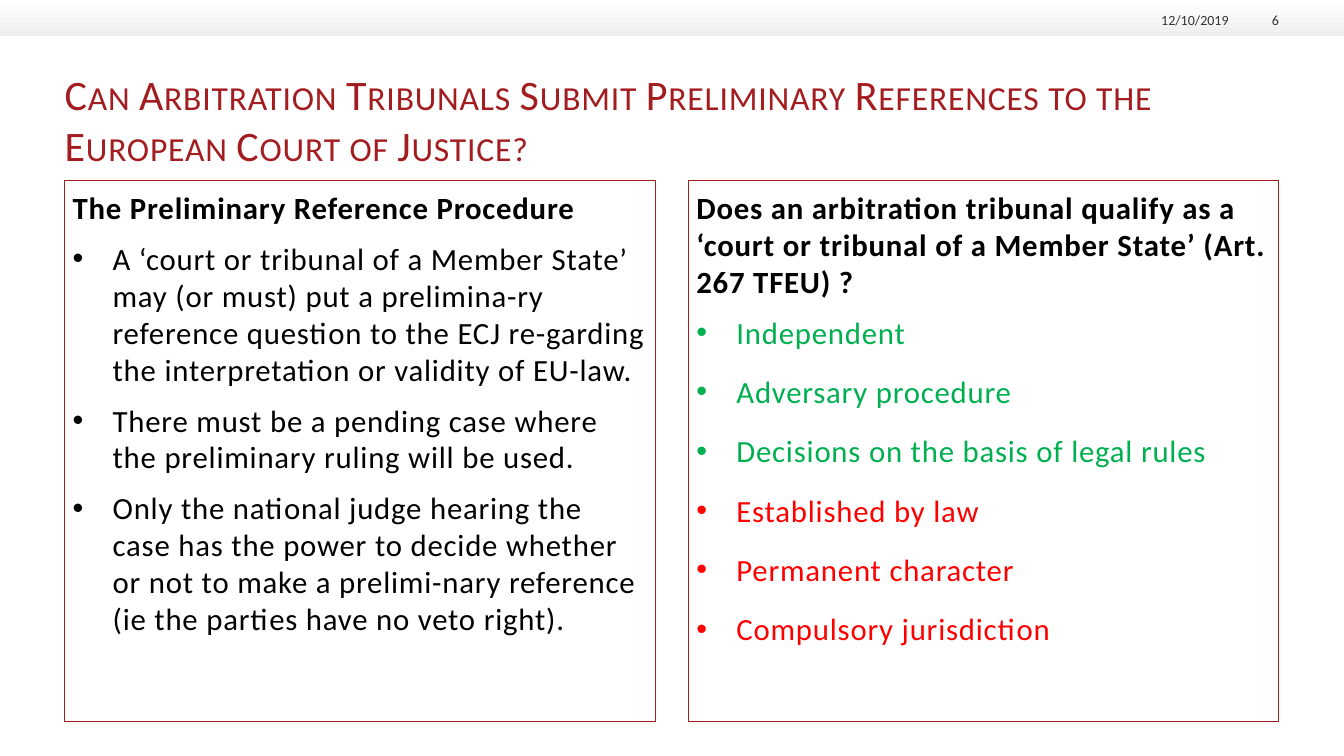
from lxml import etree
from pptx import Presentation
from pptx.dml.color import RGBColor
from pptx.enum import shapes, text
from pptx.oxml.ns import qn
from pptx.util import Cm, Pt

CRIMSON = RGBColor(0xA3, 0x1D, 0x20)
BLACK = RGBColor(0, 0, 0)
GREEN = RGBColor(0x00, 0xB0, 0x50)
RED = RGBColor(0xFF, 0, 0)
GREY = RGBColor(0x33, 0x33, 0x33)
WHITE = RGBColor(0xFF, 0xFF, 0xFF)
SILVER = RGBColor(0xEE, 0xEF, 0xEE)

MARGIN = Cm(1.63)
INDENT = Cm(1.01)
PANEL_WIDTH = Cm(14.88)

deck = Presentation()
deck.slide_width, deck.slide_height = Cm(33.87), Cm(19.05)
page = deck.slides.add_slide(deck.slide_layouts[6])


def add_box(left, top, width, height, inset=0, anchor=text.MSO_ANCHOR.TOP):
    box = page.shapes.add_textbox(left, top, width, height)
    frame = box.text_frame
    frame.word_wrap = True
    frame.vertical_anchor = anchor
    frame.margin_left = frame.margin_right = inset
    frame.margin_top = frame.margin_bottom = inset
    return box


def write(para, words, size, colour, bold=False, **run_settings):
    span = para.add_run()
    span.text = words
    para.font.name = "Calibri"
    para.font.size = Pt(size)
    para.font.bold = bold
    para.font.color.rgb = colour
    for name, value in run_settings.items():
        span._r.get_or_add_rPr().set(name, value)


# Header band
band = page.shapes.add_shape(shapes.MSO_SHAPE.RECTANGLE, 0, 0, deck.slide_width, Cm(0.92))
band.shadow.inherit = False
band.line.fill.background()
band.fill.gradient()
band.fill.gradient_angle = 270
for stop, colour in zip(band.fill.gradient_stops, (WHITE, SILVER)):
    stop.color.rgb = colour

# Title
title = add_box(MARGIN, Cm(1.73), Cm(30.58), Cm(2.41))
write(title.text_frame.paragraphs[0],
      "Can Arbitration Tribunals Submit Preliminary References to the European Court of Justice?",
      30, CRIMSON, spc="60", cap="small")

# Two panels: left edge, heading, space after each bullet, bullets
panels = [
    (MARGIN, "The Preliminary Reference Procedure", 0, [
        ("A ‘court or tribunal of a Member State’ may (or must) put a prelimina-ry reference "
         "question to the ECJ re-garding the interpretation or validity of EU-law.", BLACK),
        ("There must be a pending case where the preliminary ruling will be used.", BLACK),
        ("Only the national judge hearing the case has the power to decide whether or not to "
         "make a prelimi-nary reference (ie the parties have no veto right).", BLACK),
    ]),
    (Cm(17.35), "Does an arbitration tribunal qualify as a ‘court or tribunal of a Member State’ "
     "(Art. 267 TFEU) ?", 6, [
        ("Independent", GREEN),
        ("Adversary procedure", GREEN),
        ("Decisions on the basis of legal rules", GREEN),
        ("Established by law", RED),
        ("Permanent character", RED),
        ("Compulsory jurisdiction", RED),
    ]),
]
for left, heading, space_after, bullets in panels:
    panel = add_box(left, Cm(4.55), PANEL_WIDTH, Cm(13.64), inset=Cm(0.2))
    panel.line.color.rgb = CRIMSON
    panel.line.width = Pt(0.75)
    write(panel.text_frame.paragraphs[0], heading, 22, BLACK, bold=True, spc="60")
    for words, colour in bullets:
        para = panel.text_frame.add_paragraph()
        para.space_before = Pt(10)
        para.space_after = Pt(space_after)
        settings = para._p.get_or_add_pPr()
        settings.set("marL", str(INDENT))
        settings.set("indent", str(-INDENT))
        etree.SubElement(settings, qn("a:buFont")).set("typeface", "Arial")
        etree.SubElement(settings, qn("a:buChar")).set("char", "•")
        write(para, words, 22, colour, spc="60")

# Date and page number
for left, width, words in ((28.7, 2.26, "12/10/2019"), (31.17, 1.06, "6")):
    box = add_box(Cm(left), Cm(0.23), Cm(width), Cm(0.48), anchor=text.MSO_ANCHOR.BOTTOM)
    para = box.text_frame.paragraphs[0]
    para.alignment = text.PP_ALIGN.RIGHT
    write(para, words, 10, GREY)

deck.save("out.pptx")
